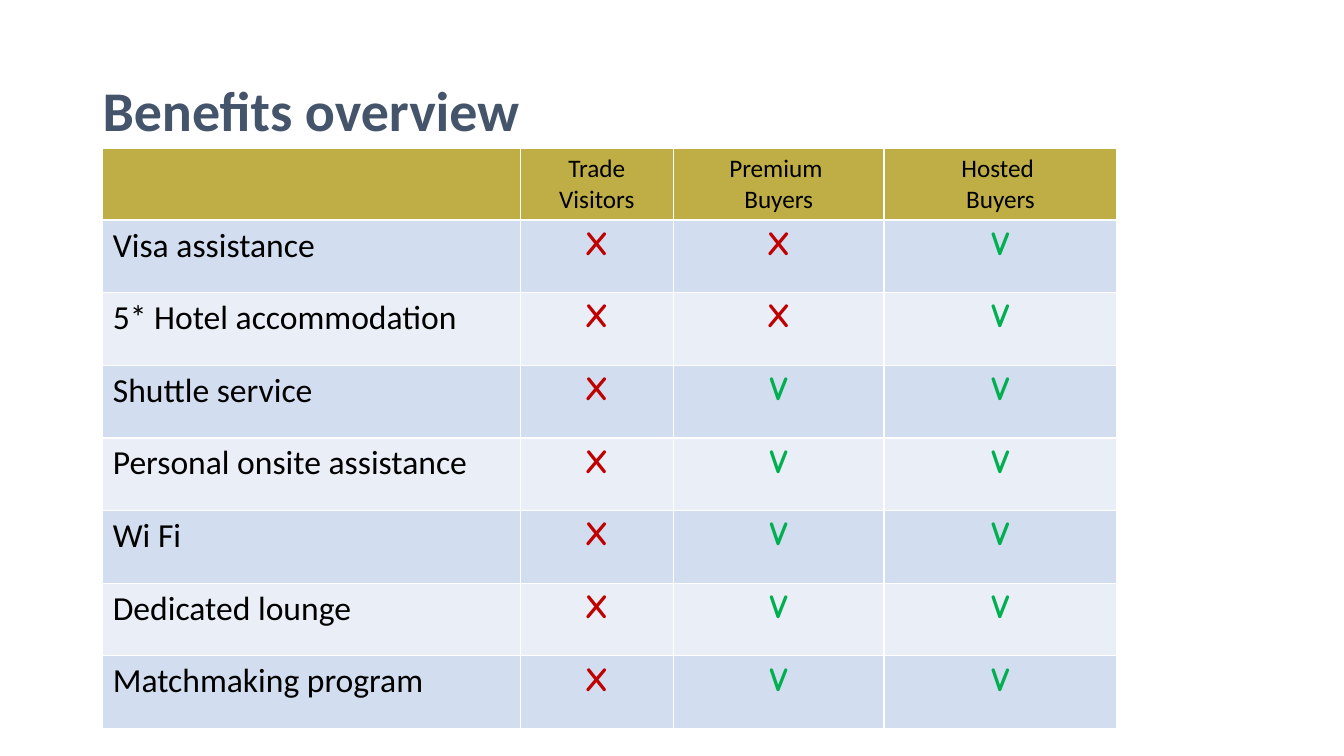
from dataclasses import dataclass

import pptx
import pptx.dml.color
import pptx.enum.text
import pptx.util

Cm = pptx.util.Cm
Pt = pptx.util.Pt
RGB = pptx.dml.color.RGBColor.from_string
ALIGN = pptx.enum.text.PP_ALIGN

TITLE = "Benefits overview"
HEADERS = [[], ["Trade Visitors"], ["Premium ", "Buyers"], ["Hosted ", "Buyers"]]
BENEFITS = [
    ("Visa assistance", "XXV"),
    ("5* Hotel accommodation", "XXV"),
    ("Shuttle service", "XVV"),
    ("Personal onsite assistance", "XVV"),
    ("Wi Fi", "XVV"),
    ("Dedicated lounge", "XVV"),
    ("Matchmaking program", "XVV"),
]
COLUMN_WIDTHS = [10.52, 3.86, 5.31, 5.87]
HEADER_HEIGHT, ROW_HEIGHT, TABLE_HEIGHT = 1.45, 1.83, 15.01


@dataclass(frozen=True)
class Theme:
    font: str = "Calibri"
    mark_font: str = "Comic Neue"
    title: str = "44546A"
    text: str = "000000"
    header: str = "BFAE45"
    bands: tuple = ("D2DEEF", "EAEFF7")
    yes: str = "00B050"
    no: str = "C00000"
    title_size: int = 40
    header_size: int = 18
    body_size: int = 24


theme = Theme()


def add_run(p, text, font, size, color, bold=False):
    r = p.add_run()
    r.text = text
    r.font.name = font
    r.font.size = Pt(size)
    r.font.bold = bold
    r.font.color.rgb = RGB(color)


def fill_cell(cell, color):
    cell.fill.solid()
    cell.fill.fore_color.rgb = RGB(color)


def add_title(s):
    sp = s.shapes.title
    sp.left, sp.top, sp.width, sp.height = Cm(2.33), Cm(1.01), Cm(29.21), Cm(3.68)
    tf = sp.text_frame
    tf.vertical_anchor = pptx.enum.text.MSO_ANCHOR.MIDDLE
    p = tf.paragraphs[0]
    p.alignment = ALIGN.LEFT
    p.line_spacing = 0.9
    add_run(p, TITLE, theme.font, theme.title_size, theme.title, True)


def add_benefits(s):
    frame = s.shapes.add_table(
        len(BENEFITS) + 1, len(COLUMN_WIDTHS), Cm(2.59), Cm(3.74),
        Cm(sum(COLUMN_WIDTHS)), Cm(TABLE_HEIGHT))
    table = frame.table
    for column, width in zip(table.columns, COLUMN_WIDTHS):
        column.width = Cm(width)
    for i, row in enumerate(table.rows):
        row.height = Cm(ROW_HEIGHT if i else HEADER_HEIGHT)
    frame.height = Cm(TABLE_HEIGHT)

    for cell, lines in zip(table.rows[0].cells, HEADERS):
        fill_cell(cell, theme.header)
        tf = cell.text_frame
        tf.paragraphs[0].font.size = Pt(theme.header_size)
        for i, line in enumerate(lines):
            p = tf.add_paragraph() if i else tf.paragraphs[0]
            p.alignment = ALIGN.CENTER
            add_run(p, line, theme.font, theme.header_size, theme.text)

    for i, (benefit, marks) in enumerate(BENEFITS):
        label, *mark_cells = table.rows[i + 1].cells
        band = theme.bands[i % 2]
        fill_cell(label, band)
        add_run(label.text_frame.paragraphs[0], benefit,
                theme.font, theme.body_size, theme.text)
        for cell, mark in zip(mark_cells, marks):
            fill_cell(cell, band)
            p = cell.text_frame.paragraphs[0]
            p.alignment = ALIGN.CENTER
            color = theme.yes if mark == "V" else theme.no
            add_run(p, mark, theme.mark_font, theme.body_size, color, True)


def main():
    prs = pptx.Presentation()
    prs.slide_width, prs.slide_height = Cm(33.87), Cm(19.05)
    s = prs.slides.add_slide(prs.slide_layouts[5])
    add_title(s)
    add_benefits(s)
    prs.save("out.pptx")


if __name__ == "__main__":
    main()
